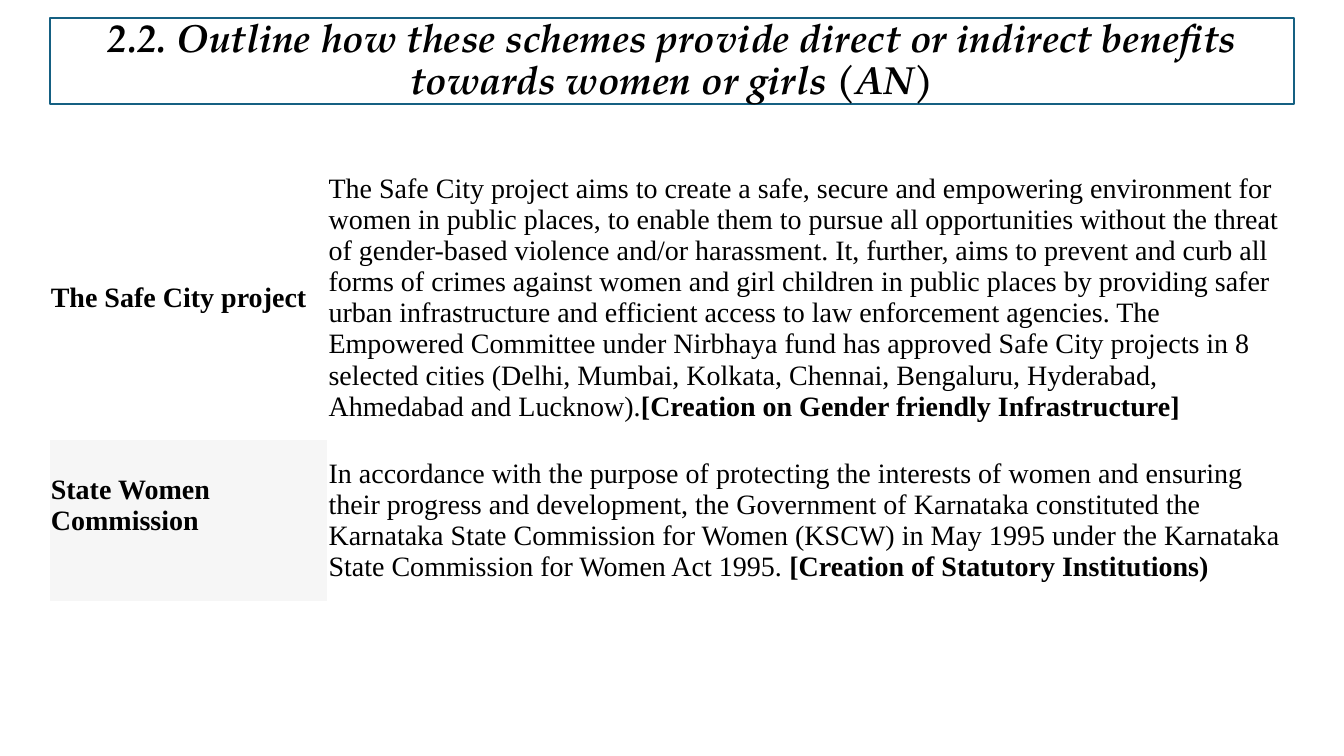
import pptx
import pptx.dml.color
import pptx.enum.shapes
import pptx.enum.text
import pptx.util

Cm = pptx.util.Cm
Pt = pptx.util.Pt
RGB = pptx.dml.color.RGBColor
ALIGN = pptx.enum.text.PP_ALIGN
MID = pptx.enum.text.MSO_ANCHOR.MIDDLE

BLACK = RGB(0x00, 0x00, 0x00)
WHITE = RGB(0xFF, 0xFF, 0xFF)
TEAL = RGB(0x15, 0x60, 0x82)
GREY = RGB(0xF6, 0xF6, 0xF6)

TITLE = "2.2. Outline how these schemes provide direct or indirect benefits towards women or girls (AN)"
SAFE = (
    "The Safe City project aims to create a safe, secure and empowering environment for women "
    "in public places, to enable them to pursue all opportunities without the threat of "
    "gender-based violence and/or harassment. It, further, aims to prevent and curb all forms "
    "of crimes against women and girl children in public places by providing safer urban "
    "infrastructure and efficient access to law enforcement agencies. The Empowered Committee "
    "under Nirbhaya fund has approved Safe City projects in 8 selected cities (Delhi, Mumbai, "
    "Kolkata, Chennai, Bengaluru, Hyderabad, Ahmedabad and Lucknow)."
)
STATE = (
    "In accordance with the purpose of protecting the interests of women and ensuring their "
    "progress and development, the Government of Karnataka constituted the Karnataka State "
    "Commission for Women (KSCW) in May 1995 under the Karnataka State Commission for Women "
    "Act 1995. "
)
ROWS = [
    [
        [("The Safe City project", True)],
        [(SAFE, False), ("[Creation on Gender friendly Infrastructure]", True)],
    ],
    [
        [("State Women Commission", True)],
        [(STATE, False), ("[Creation of Statutory Institutions)", True)],
    ],
]


class Deck:
    head = {"name": "TeX Gyre Pagella", "size": Pt(28), "bold": True, "italic": True}
    body = {"name": "Times New Roman", "size": Pt(20)}
    inset = {
        "margin_left": Cm(0.03),
        "margin_right": Cm(0.03),
        "margin_top": Cm(0.03),
        "margin_bottom": Cm(0),
        "vertical_anchor": MID,
    }
    plain = {"first_row": False, "horz_banding": False}

    def __init__(self, slide):
        self.slide = slide

    def apply(self, item, style):
        for key, value in style.items():
            setattr(item, key, value)

    def add_text(self, para, text, style):
        run = para.add_run()
        run.text = text
        self.apply(run.font, style)
        run.font.color.rgb = BLACK

    def title(self, text, left, top, width, height):
        box = self.slide.shapes.add_shape(
            pptx.enum.shapes.MSO_SHAPE.RECTANGLE, Cm(left), Cm(top), Cm(width), Cm(height)
        )
        box.shadow.inherit = False
        box.fill.solid()
        box.fill.fore_color.rgb = WHITE
        box.line.color.rgb = TEAL
        box.line.width = Pt(1.5)
        self.apply(box.text_frame, {"word_wrap": True, "vertical_anchor": MID})
        para = box.text_frame.paragraphs[0]
        self.apply(para, {"alignment": ALIGN.CENTER, "line_spacing": 0.9})
        self.add_text(para, text, self.head)

    def table(self, rows, left, top, widths, heights):
        grid = self.slide.shapes.add_table(
            len(rows), len(widths), Cm(left), Cm(top), Cm(sum(widths)), Cm(sum(heights))
        ).table
        self.apply(grid, self.plain)
        for col, width in zip(grid.columns, widths):
            col.width = Cm(width)
        for row, height, cells in zip(grid.rows, heights, rows):
            row.height = Cm(height)
            for cell, runs in zip(row.cells, cells):
                self.apply(cell, self.inset)
                cell.fill.background()
                para = cell.text_frame.paragraphs[0]
                for text, bold in runs:
                    self.add_text(para, text, {**self.body, "bold": bold})
        return grid


def main():
    show = pptx.Presentation()
    show.slide_width = Cm(33.87)
    show.slide_height = Cm(19.05)
    deck = Deck(show.slides.add_slide(show.slide_layouts[6]))
    deck.title(TITLE, 1.25, 0.45, 31.37, 2.17)
    grid = deck.table(ROWS, 1.25, 3.92, [7, 24.37], [7.14, 4.09])
    label = grid.cell(1, 0)
    label.fill.solid()
    label.fill.fore_color.rgb = GREY
    label.margin_bottom = Cm(0.78)
    show.save("out.pptx")


if __name__ == "__main__":
    main()
